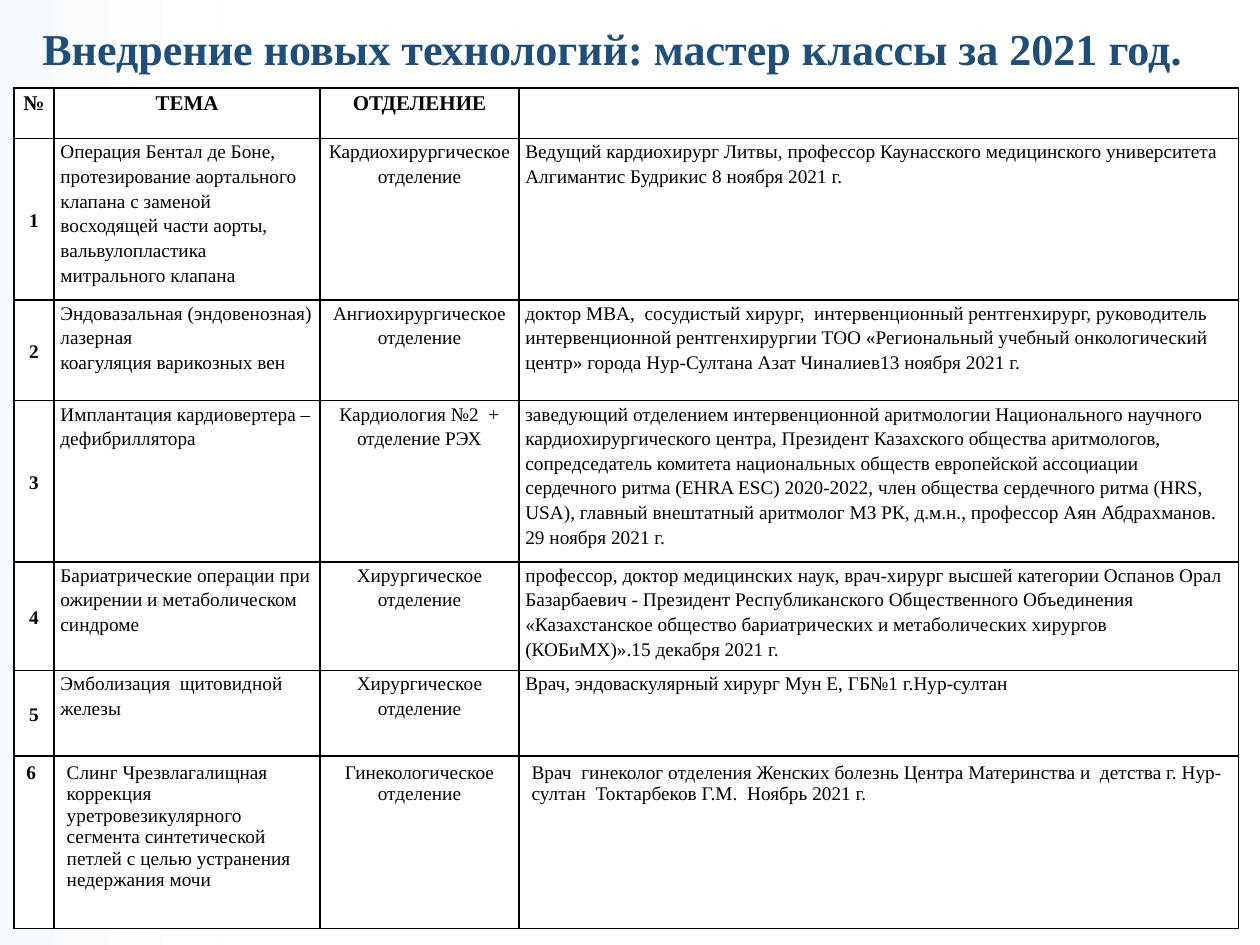
from lxml import etree
from pptx import Presentation
from pptx.dml.color import RGBColor
from pptx.enum.shapes import MSO_SHAPE
from pptx.enum.text import MSO_ANCHOR, PP_ALIGN
from pptx.oxml.ns import qn
from pptx.util import Inches, Pt

COLORS = {"title": "1F4E79", "text": "000000", "border": "000000",
          "cell": "FFFFFF", "strip_start": "F7FAFD", "strip_end": "FFFFFF"}
COLUMN_WIDTHS = [0.32, 2.11, 1.58, 5.71]
ROW_HEIGHTS = [0.4, 1.28, 0.8, 1.28, 0.86, 0.68, 1.37]
NO_BREAK_SPACE = chr(160)
# Cell text; a list holds separate paragraphs
ROWS = [
    ["№", "ТЕМА", "ОТДЕЛЕНИЕ", ""],
    ["1",
     "Операция Бентал де Боне, протезирование аортального клапана с заменой "
     "восходящей части аорты, вальвулопластика митрального клапана",
     ["Кардиохирургическое", "отделение"],
     "Ведущий кардиохирург Литвы, профессор Каунасского медицинского университета "
     "Алгимантис Будрикис 8 ноября 2021 г."],
    ["2",
     f"Эндовазальная (эндовенозная) лазерная коагуляция{NO_BREAK_SPACE}варикозных вен",
     ["Ангиохирургическое", "отделение"],
     "доктор MBA,  сосудистый хирург,  интервенционный рентгенхирург, руководитель "
     "интервенционной рентгенхирургии ТОО «Региональный учебный онкологический "
     "центр» города Нур-Султана Азат Чиналиев13 ноября 2021 г."],
    ["3",
     "Имплантация кардиовертера – дефибриллятора",
     ["Кардиология №2  +", "отделение РЭХ"],
     "заведующий отделением интервенционной аритмологии Национального научного "
     "кардиохирургического центра, Президент Казахского общества аритмологов, "
     "сопредседатель комитета национальных обществ европейской ассоциации "
     "сердечного ритма (EHRA ESC) 2020-2022, член общества сердечного ритма (HRS, "
     "USA), главный внештатный аритмолог МЗ РК, д.м.н., профессор Аян Абдрахманов.  "
     "29 ноября 2021 г."],
    ["4",
     "Бариатрические операции при ожирении и метаболическом синдроме",
     "Хирургическое отделение",
     "профессор, доктор медицинских наук, врач-хирург высшей категории Оспанов Орал "
     "Базарбаевич - Президент Республиканского Общественного Объединения "
     "«Казахстанское общество бариатрических и метаболических хирургов "
     "(КОБиМХ)».15 декабря 2021 г."],
    ["5",
     "Эмболизация  щитовидной железы",
     "Хирургическое отделение",
     "Врач, эндоваскулярный хирург Мун Е, ГБ№1 г.Нур-султан"],
    ["6",
     "Слинг Чрезвлагалищная коррекция уретровезикулярного сегмента синтетической "
     "петлей с целью устранения недержания мочи",
     "Гинекологическое отделение",
     "Врач  гинеколог отделения Женских болезнь Центра Материнства и  детства г. Нур-"
     "султан  Токтарбеков Г.М.  Ноябрь 2021 г."],
]


def format_paragraph(para, size, bold, color, **layout):
    font_format = {"name": "Times New Roman", "size": Pt(size), "bold": bold}
    for name, value in font_format.items():
        setattr(para.font, name, value)
    para.font.color.rgb = RGBColor.from_string(COLORS[color])
    for name, value in layout.items():
        setattr(para, name, value)


def add_borders(cell, points):
    properties = cell._tc.get_or_add_tcPr()
    for position, side in enumerate(("a:lnL", "a:lnR", "a:lnT", "a:lnB")):
        line = etree.Element(qn(side), w=str(Pt(points)))
        fill = etree.SubElement(line, qn("a:solidFill"))
        etree.SubElement(fill, qn("a:srgbClr"), val=COLORS["border"])
        properties.insert(position, line)


deck = Presentation()
deck.slide_width, deck.slide_height = Inches(10), Inches(7.5)
page = deck.slides.add_slide(deck.slide_layouts[6])

strip = page.shapes.add_shape(MSO_SHAPE.RECTANGLE, 0, 0, Inches(1.72), Inches(7.5))
strip.shadow.inherit = False
strip.line.fill.background()
strip.fill.gradient()
strip.fill.gradient_angle = 0
for stop, name in zip(strip.fill.gradient_stops, ("strip_start", "strip_end")):
    stop.color.rgb = RGBColor.from_string(COLORS[name])

title = page.shapes.add_textbox(Inches(0.18), Inches(0.21), Inches(9.54), Inches(0.4))
frame_format = {"word_wrap": True, "vertical_anchor": MSO_ANCHOR.MIDDLE,
                "margin_right": Inches(0.28)}
for name, value in frame_format.items():
    setattr(title.text_frame, name, value)
title.text_frame.text = "Внедрение новых технологий: мастер классы за 2021 год."
format_paragraph(title.text_frame.paragraphs[0], 25.2, True, "title",
                 alignment=PP_ALIGN.CENTER, line_spacing=0.9)

table = page.shapes.add_table(
    len(ROWS), len(COLUMN_WIDTHS), Inches(0.11), Inches(0.7),
    Inches(sum(COLUMN_WIDTHS)), Inches(sum(ROW_HEIGHTS))).table
for column, width in zip(table.columns, COLUMN_WIDTHS):
    column.width = Inches(width)
for row, height in zip(table.rows, ROW_HEIGHTS):
    row.height = Inches(height)

last_row = len(ROWS) - 1
for row_index, row in enumerate(ROWS):
    is_header, is_last = row_index == 0, row_index == last_row
    for column_index, content in enumerate(row):
        is_number = column_index == 0
        cell = table.cell(row_index, column_index)
        cell.fill.solid()
        cell.fill.fore_color.rgb = RGBColor.from_string(COLORS["cell"])
        add_borders(cell, 1)
        if not is_last:
            cell.margin_left = cell.margin_right = Inches(0.05)
            cell.margin_top = cell.margin_bottom = 0
            if is_number and not is_header:
                cell.vertical_anchor = MSO_ANCHOR.MIDDLE
        centered = is_header or column_index == 2 or (is_number and not is_last)
        layout = {"alignment": PP_ALIGN.CENTER if centered else PP_ALIGN.LEFT}
        if not is_last:
            layout["line_spacing"] = 1.15
        if is_header:
            layout["space_after"] = Pt(5)
        elif row_index in (4, 5) and column_index >= 2:
            layout["space_after"] = Pt(10)
        cell.text = content if isinstance(content, str) else "\n".join(content)
        for para in cell.text_frame.paragraphs:
            format_paragraph(para, 12 if is_header else 11,
                             is_header or is_number, "text", **layout)

deck.save("out.pptx")
